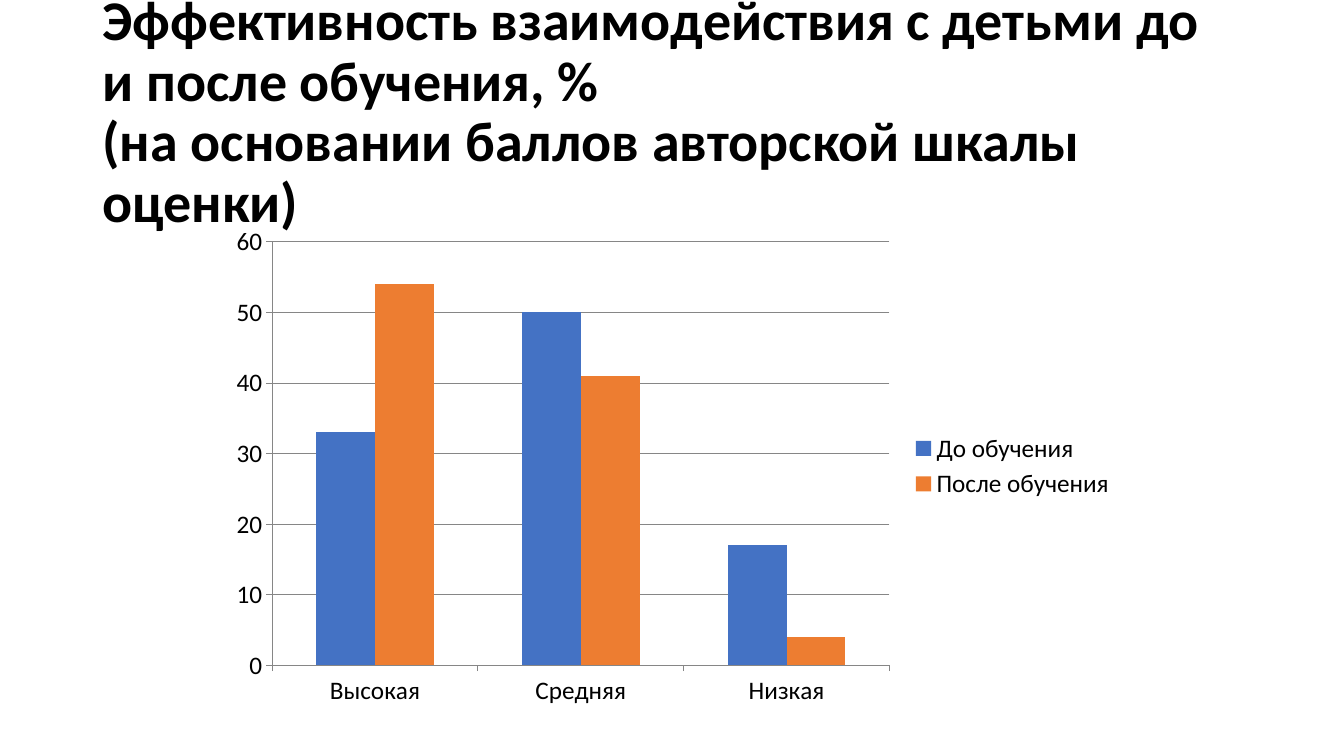
"""Build a slide comparing interaction effectiveness before and after training."""
import pptx
import pptx.chart.data
import pptx.dml.color
import pptx.enum.chart
import pptx.enum.text
import pptx.util

COLORS = {
    "background": "FFFFFF",
    "text": "000000",
    "grid": "868686",
    "before": "4472C4",
    "after": "ED7D31",
}


class SlideBuilder:
    font_name = "Calibri"
    columns, rows = 160, 90

    def __init__(self, deck):
        self.deck = deck
        self.slide = deck.slides.add_slide(deck.slide_layouts[5])
        self.paint(self.slide.background.fill, "background")

    def box(self, column, row, width, height):
        unit_x = self.deck.slide_width / self.columns
        unit_y = self.deck.slide_height / self.rows
        return [round(length) for length in
                (column * unit_x, row * unit_y, width * unit_x, height * unit_y)]

    def paint(self, fill, color):
        fill.solid()
        fill.fore_color.rgb = pptx.dml.color.RGBColor.from_string(COLORS[color])

    def style_font(self, font, size, bold=False):
        font.name = self.font_name
        font.size = pptx.util.Pt(size)
        font.bold = bold
        font.color.rgb = pptx.dml.color.RGBColor.from_string(COLORS["text"])

    def title(self, text, place):
        heading = self.slide.shapes.title
        heading.left, heading.top, heading.width, heading.height = self.box(*place)
        frame = heading.text_frame
        frame.text = text
        frame.word_wrap = True
        frame.auto_size = pptx.enum.text.MSO_AUTO_SIZE.NONE
        frame.vertical_anchor = pptx.enum.text.MSO_ANCHOR.MIDDLE
        for paragraph in frame.paragraphs:
            paragraph.alignment = pptx.enum.text.PP_ALIGN.LEFT
            paragraph.line_spacing = 0.9
            paragraph.space_before = pptx.util.Pt(0)
            for run in paragraph.runs:
                self.style_font(run.font, 40, bold=True)

    def column_chart(self, levels, results, place):
        data = pptx.chart.data.CategoryChartData()
        data.categories = levels
        for label, shares, _ in results:
            data.add_series(label, shares)
        chart = self.slide.shapes.add_chart(
            pptx.enum.chart.XL_CHART_TYPE.COLUMN_CLUSTERED, *self.box(*place), data
        ).chart
        self.style_font(chart.font, 18)
        chart.has_title = False
        chart.has_legend = True
        chart.legend.position = pptx.enum.chart.XL_LEGEND_POSITION.RIGHT
        chart.legend.include_in_layout = False

        plot = chart.plots[0]
        plot.vary_by_categories = False
        plot.gap_width = 150
        plot.overlap = 0
        for series, (_, _, color) in zip(plot.series, results):
            self.paint(series.format.fill, color)

        scale = chart.value_axis
        scale.minimum_scale, scale.maximum_scale, scale.major_unit = 0, 60, 10
        scale.has_major_gridlines = True
        for axis in (chart.category_axis, scale):
            axis.major_tick_mark = pptx.enum.chart.XL_TICK_MARK.OUTSIDE
            axis.minor_tick_mark = pptx.enum.chart.XL_TICK_MARK.NONE
        for line in (chart.category_axis.format.line, scale.format.line,
                     scale.major_gridlines.format.line):
            self.paint(line.fill, "grid")
            line.width = pptx.util.Pt(0.75)


def main():
    deck = pptx.Presentation()
    deck.slide_width = pptx.util.Inches(13.33)
    deck.slide_height = pptx.util.Inches(7.5)
    page = SlideBuilder(deck)
    page.title(
        "Эффективность взаимодействия с детьми до и после обучения, %\v"
        "(на основании баллов авторской шкалы оценки)",
        (11, 4.8, 138, 17.4),
    )
    page.column_chart(
        ["Высокая", "Средняя", "Низкая"],
        [
            ("До обучения", (33, 50, 17), "before"),
            ("После обучения", (54, 41, 4), "after"),
        ],
        (26, 25.8, 108, 59.4),
    )
    deck.save("out.pptx")


if __name__ == "__main__":
    main()
